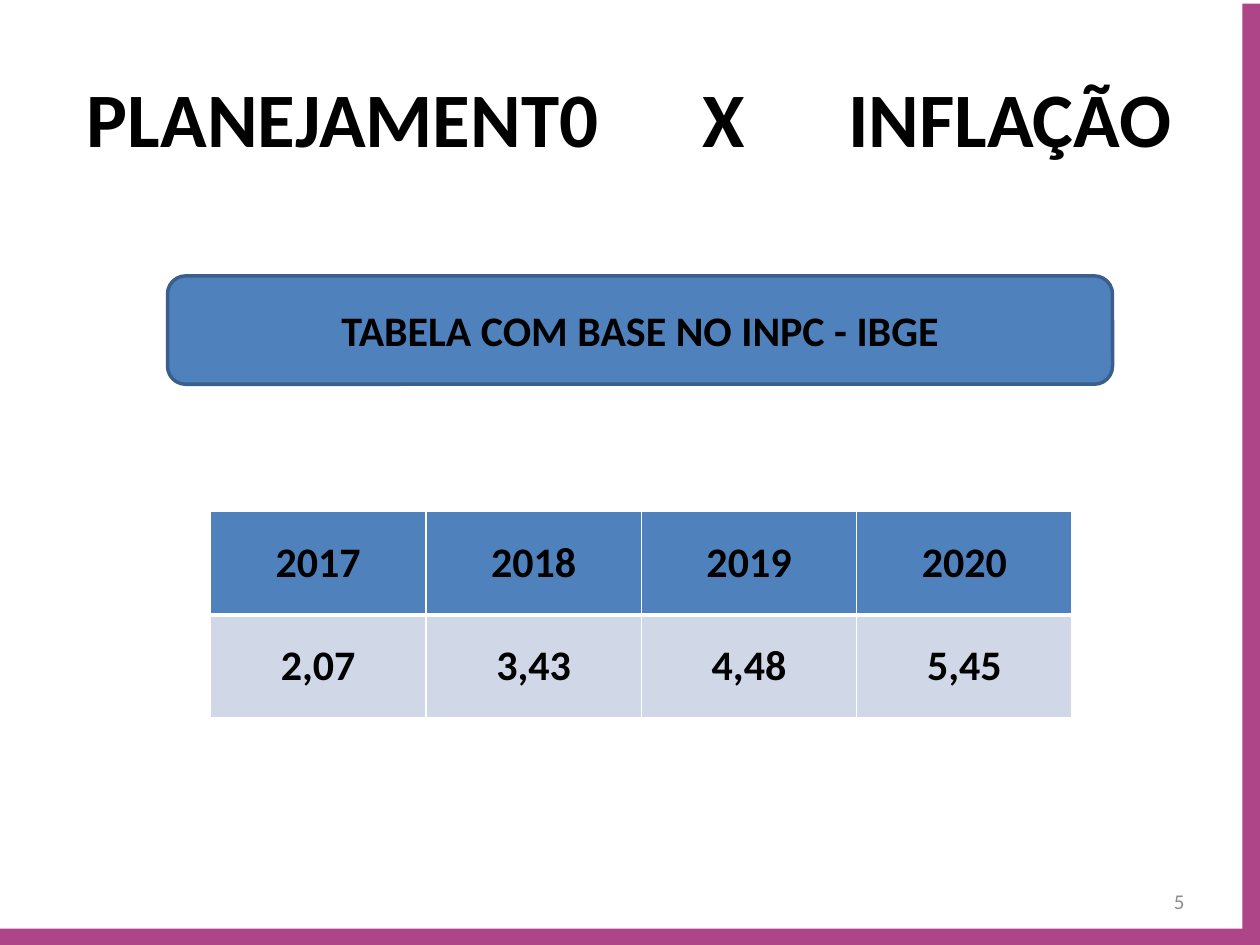
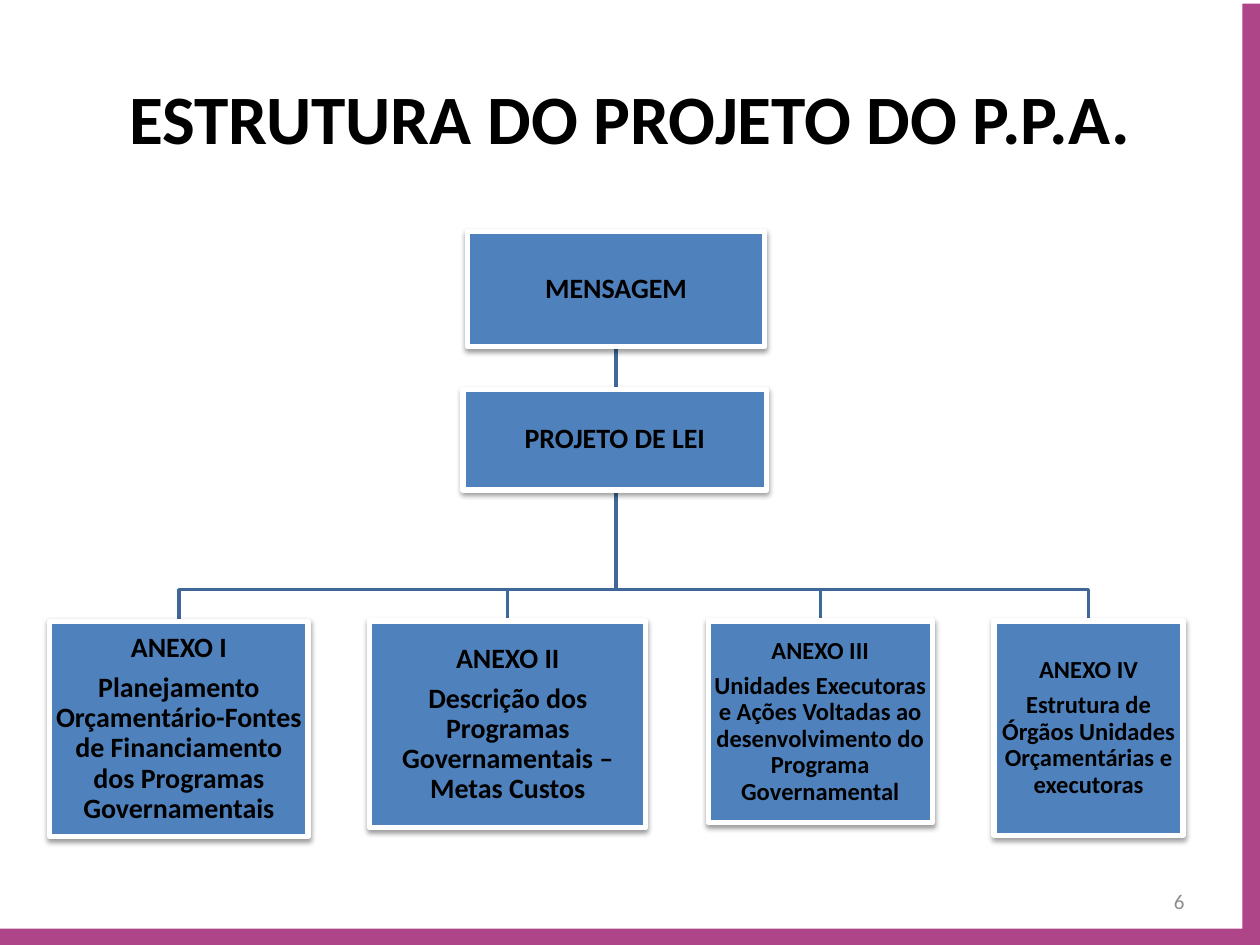
"""Build two slides on budget planning: inflation table and P.P.A. structure."""
import lxml.etree
import pptx
import pptx.dml.color
import pptx.enum.shapes
import pptx.enum.text
import pptx.oxml.ns
import pptx.util

Inches, Pt = pptx.util.Inches, pptx.util.Pt
ALIGN = pptx.enum.text.PP_ALIGN
SHAPE = pptx.enum.shapes.MSO_SHAPE
qn, Sub = pptx.oxml.ns.qn, lxml.etree.SubElement
BLUE, EDGE, WIRE, PALE = "4F81BD", "3A5F8C", "3F6797", "D0D8E8"
PINK, GREY, BLACK, WHITE = "AD4588", "8C8C8C", "000000", "FFFFFF"


def paint(fill, hue):
    fill.solid()
    fill.fore_color.rgb = pptx.dml.color.RGBColor.from_string(hue)


def write(frame, texts, size, hue=BLACK, bold=True, align=ALIGN.CENTER):
    frame.word_wrap = True
    frame.vertical_anchor = pptx.enum.text.MSO_ANCHOR.MIDDLE
    for i, text in enumerate(texts):
        para = frame.add_paragraph() if i else frame.paragraphs[0]
        para.alignment = align
        run = para.add_run()
        run.text = text
        run.font.name, run.font.size, run.font.bold = "Calibri", Pt(size), bold
        paint(run.font.fill, hue)


prs = pptx.Presentation()
prs.slide_width, prs.slide_height = Inches(10), Inches(7.5)

titles = [
    ("PLANEJAMENT0\tX\tINFLAÇÃO", 44, ALIGN.LEFT),
    ("ESTRUTURA DO PROJETO DO P.P.A.", 39.6, ALIGN.CENTER),
]
bands = [(0, 7.37, 10, 0.13), (9.86, 0.03, 0.14, 7.47)]
for page, (text, size, align) in enumerate(titles, 5):
    slide = prs.slides.add_slide(prs.slide_layouts[5])
    title = slide.shapes.title
    title.left, title.top = Inches(0.5), Inches(0.3)
    title.width, title.height = Inches(9), Inches(1.25)
    write(title.text_frame, [text], size, align=align)
    title.text_frame.auto_size = pptx.enum.text.MSO_AUTO_SIZE.NONE
    foot = slide.shapes.add_textbox(Inches(7.17), Inches(6.95), Inches(2.33), Inches(0.4))
    write(foot.text_frame, [str(page)], 12, GREY, False, ALIGN.RIGHT)
    for spot in bands:
        band = slide.shapes.add_shape(SHAPE.RECTANGLE, *map(Inches, spot))
        band.shadow.inherit = False
        paint(band.fill, PINK)
        band.line.fill.background()

prices, chart = prs.slides

frame = prices.shapes.title.text_frame
frame.margin_left = Inches(0.19)
stops = Sub(frame.paragraphs[0]._p.get_or_add_pPr(), qn("a:tabLst"))
for pos, kind in [(5.05, "ctr"), (8.61, "r")]:
    Sub(stops, qn("a:tab"), pos=str(Inches(pos)), algn=kind)

label = prices.shapes.add_shape(
    SHAPE.ROUNDED_RECTANGLE, Inches(1.33), Inches(2.19), Inches(7.5), Inches(0.86))
label.shadow.inherit = False
paint(label.fill, BLUE)
paint(label.line.fill, EDGE)
label.line.width = Pt(2)
write(label.text_frame, ["TABELA COM BASE NO INPC - IBGE"], 24)

rates = [("2017", "2018", "2019", "2020"), ("2,07", "3,43", "4,48", "5,45")]
grid = prices.shapes.add_table(
    2, 4, Inches(1.67), Inches(4.06), Inches(6.84), Inches(1.64)).table
for r, row in enumerate(rates):
    for c, text in enumerate(row):
        cell = grid.cell(r, c)
        props = cell._tc.get_or_add_tcPr()
        for side in "LRTB":
            thick = 3 if (r, side) in [(0, "B"), (1, "T")] else 1
            rule = Sub(props, qn("a:ln" + side), w=str(Pt(thick)))
            Sub(Sub(rule, qn("a:solidFill")), qn("a:srgbClr"), val=WHITE)
        paint(cell.fill, PALE if r else BLUE)
        write(cell.text_frame, [text], 24)
        cell.vertical_anchor = pptx.enum.text.MSO_ANCHOR.MIDDLE

nodes = [
    (4.89, 1.84, 2.36, 0.91, 16, ["MENSAGEM"]),
    (4.88, 3.09, 2.41, 0.8, 16, ["PROJETO DE LEI"]),
    (1.42, 4.93, 2.05, 1.71, 16, [
        "ANEXO I",
        "Planejamento Orçamentário-Fontes de Financiamento dos Programas Governamentais"]),
    (4.03, 4.93, 2.19, 1.64, 16, [
        "ANEXO II", "Descrição dos Programas Governamentais –Metas Custos"]),
    (6.51, 4.93, 1.78, 1.6, 14, [
        "ANEXO III",
        "Unidades Executoras e Ações Voltadas ao desenvolvimento do Programa Governamental"]),
    (8.64, 4.93, 1.5, 1.7, 14, [
        "ANEXO IV", "Estrutura de Órgãos Unidades Orçamentárias e executoras"]),
]
root, bus = 4.89, 4.68
for mid, top, *rest in reversed(nodes[2:]):
    pen = chart.shapes.build_freeform(Inches(root), Inches(2.75))
    bends = [(root, bus), (mid, bus), (mid, top)]
    pen.add_line_segments([(Inches(x), Inches(y)) for x, y in bends], close=False)
    link = pen.convert_to_shape()
    link.fill.background()
    link.shadow.inherit = False
    paint(link.line.fill, WIRE)
    link.line.width = Pt(2)

for mid, top, wide, high, size, texts in nodes:
    box = chart.shapes.add_shape(
        SHAPE.RECTANGLE, Inches(mid - wide / 2), Inches(top), Inches(wide), Inches(high))
    paint(box.fill, BLUE)
    paint(box.line.fill, WHITE)
    box.line.width = Pt(3)
    box.shadow.inherit = False
    glow = Sub(box.element.spPr.find(qn("a:effectLst")), qn("a:outerShdw"),
               blurRad=str(Pt(3.1)), dist=str(Pt(1.6)), dir="5400000", rotWithShape="0")
    Sub(Sub(glow, qn("a:srgbClr"), val=BLACK), qn("a:alpha"), val="38000")
    frame = box.text_frame
    frame.margin_left = frame.margin_right = Inches(0.04)
    frame.margin_top = frame.margin_bottom = Inches(0.01)
    write(frame, texts, size)
    for para in frame.paragraphs:
        para.line_spacing = 0.9
        para.space_after = Pt(0.35 * size)

prs.save("out.pptx")
